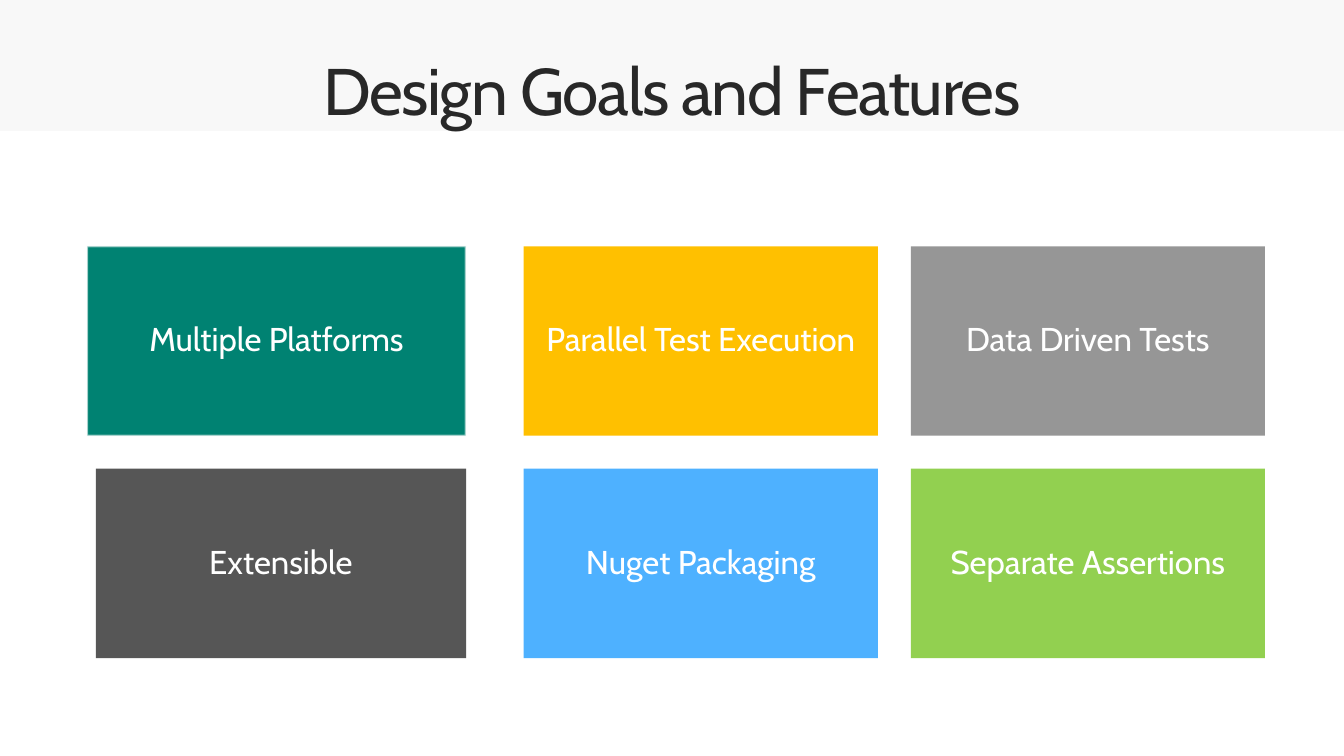
"""Build the Design Goals and Features slide."""
from lxml import etree
from pptx import Presentation
from pptx.dml.color import RGBColor
from pptx.enum.shapes import MSO_SHAPE
from pptx.enum.text import MSO_ANCHOR, PP_ALIGN
from pptx.oxml.ns import qn
from pptx.util import Pt

RECTANGLE = MSO_SHAPE.RECTANGLE
MIDDLE, TOP = MSO_ANCHOR.MIDDLE, MSO_ANCHOR.TOP
CENTER = PP_ALIGN.CENTER

FONT = "Cabin"
PALE = RGBColor(0xF8, 0xF8, 0xF8)
OUTLINE = RGBColor(0xF9, 0xF9, 0xF9)
WHITE = RGBColor(0xFF, 0xFF, 0xFF)
INK = RGBColor(0x28, 0x28, 0x28)
TEAL = RGBColor(0x00, 0x82, 0x72)
AMBER = RGBColor(0xFF, 0xC0, 0x00)
GRAY = RGBColor(0x96, 0x96, 0x96)
CHARCOAL = RGBColor(0x56, 0x56, 0x56)
BLUE = RGBColor(0x4E, 0xB1, 0xFF)
GREEN = RGBColor(0x92, 0xD0, 0x50)


def add_rectangle(left, top, width, height, color):
    box = page.shapes.add_shape(RECTANGLE, Pt(left), Pt(top), Pt(width), Pt(height))
    box.shadow.inherit = False
    box.fill.solid()
    box.fill.fore_color.rgb = color
    box.line.fill.background()
    return box


def write(box, text, size, color, anchor, side_inset, end_inset):
    frame = box.text_frame
    frame.word_wrap = True
    frame.vertical_anchor = anchor
    frame.margin_left = frame.margin_right = Pt(side_inset)
    frame.margin_top = frame.margin_bottom = Pt(end_inset)
    para = frame.paragraphs[0]
    para.alignment = CENTER
    para.line_spacing = 0.9
    span = para.add_run()
    span.text = text
    span.font.name = FONT
    span.font.size = Pt(size)
    span.font.color.rgb = color
    return span


deck = Presentation()
deck.slide_width, deck.slide_height = Pt(979.2), Pt(550.8)
page = deck.slides.add_slide(deck.slide_layouts[6])
page.background.fill.solid()
page.background.fill.fore_color.rgb = PALE

add_rectangle(0, 95.5, 979.2, 455.3, WHITE)

title = page.shapes.add_textbox(Pt(21.6), Pt(35.3), Pt(936), Pt(72))
title_span = write(title, "Design Goals and Features", 48, INK, TOP, 11.5, 7.2)
title_span.font._element.set("spc", "-100")

TILE_HEIGHT = 138
FIRST_TOP, ROW_STEP = 179.5, 162
SECOND_LEFT, COLUMN_STEP, TILE_WIDTH = 381.6, 282, 258
FIRST_COLUMN = [(63.6, 275.7), (69.8, 269.8)]
FEATURES = [
    [("Multiple Platforms", TEAL), ("Parallel Test Execution", AMBER), ("Data Driven Tests", GRAY)],
    [("Extensible", CHARCOAL), ("Nuget Packaging", BLUE), ("Separate Assertions", GREEN)],
]

tiles = {}
for row, features in enumerate(FEATURES):
    for column, (label, color) in enumerate(features):
        left, width = SECOND_LEFT + (column - 1) * COLUMN_STEP, TILE_WIDTH
        if column == 0:
            left, width = FIRST_COLUMN[row]
        tile = add_rectangle(left, FIRST_TOP + row * ROW_STEP, width, TILE_HEIGHT, color)
        write(tile, label, 24, WHITE, MIDDLE, 14.4, 11.5)
        tiles[label] = tile

outline = tiles["Multiple Platforms"].line
outline.color.rgb = OUTLINE
outline.width = Pt(1.35)
outline_color = tiles["Multiple Platforms"]._element.spPr.find(qn("a:ln")).find(".//" + qn("a:srgbClr"))
etree.SubElement(outline_color, qn("a:alpha")).set("val", "50000")

deck.save("out.pptx")
